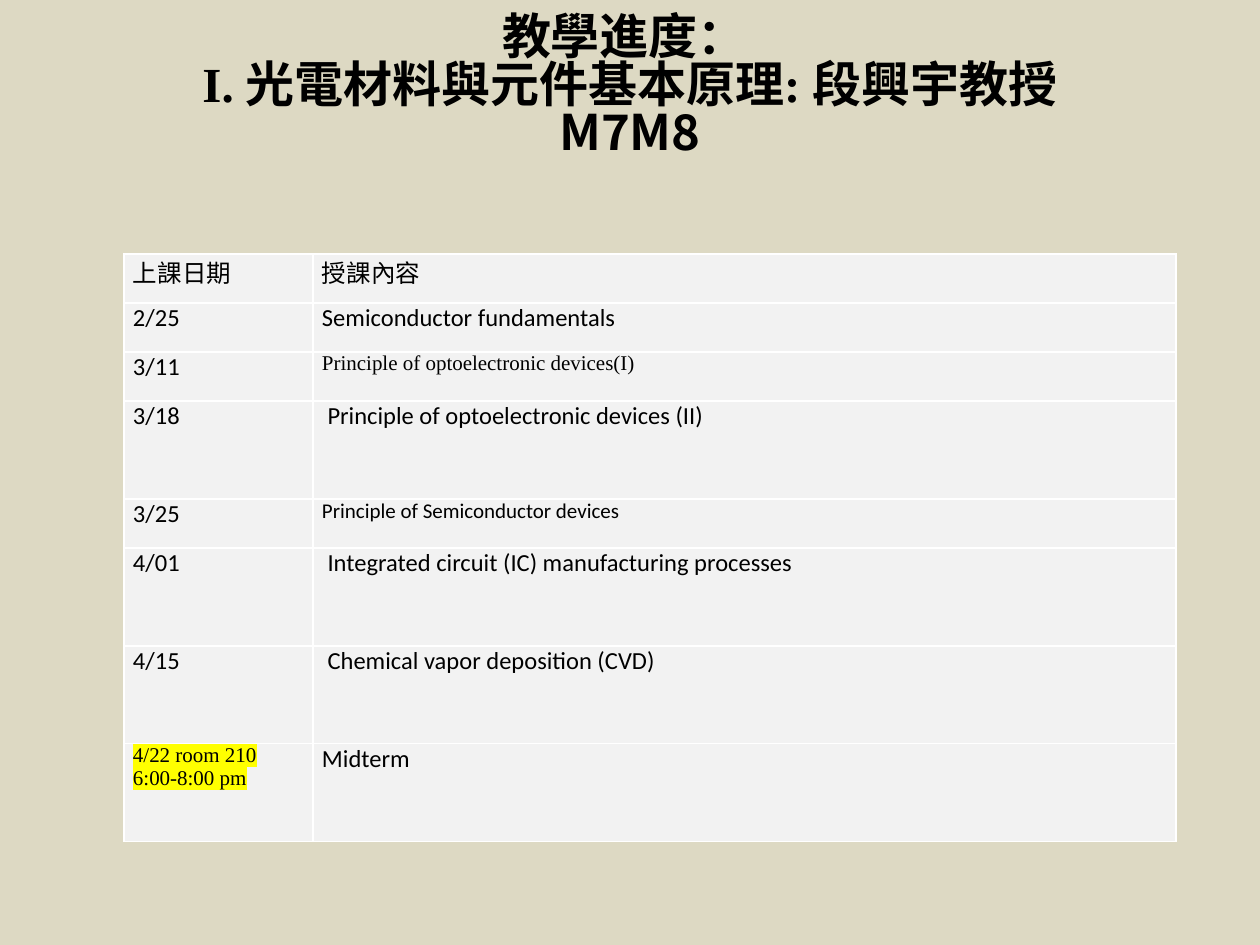
from lxml.etree import SubElement
from pptx import Presentation
from pptx.dml.color import RGBColor
from pptx.enum.text import MSO_ANCHOR as Anchor, PP_ALIGN as Align
from pptx.oxml.ns import qn
from pptx.util import Emu, Pt

PX = 914400 / 126
BEIGE = RGBColor(0xDD, 0xD9, 0xC3)
BLACK = RGBColor(0, 0, 0)
PALE = RGBColor(0xF2, 0xF2, 0xF2)
WHITE = RGBColor(0xFF, 0xFF, 0xFF)
YELLOW = RGBColor(0xFF, 0xFF, 0)
HAN, SERIF, SANS = "Noto Sans CJK SC", "Times New Roman", "Calibri"
BODY = {"size": 14, "name": SANS}
SMALL = {"size": 12, "name": SANS}
SMALL_SERIF = {"size": 12, "name": SERIF}
MARKED = {**SMALL_SERIF, "highlight": YELLOW}

TITLE = [
    [("教學進度： ", HAN)],
    [("I. ", SERIF), ("光電材料與元件基本原理", HAN), (": ", SERIF), ("段興宇教授", HAN)],
    [("M7M8", HAN)],
]
SCHEDULE = [
    (49, ["上課日期"], BODY, "授課內容", BODY),
    (49, ["2/25"], BODY, "Semiconductor fundamentals ", BODY),
    (49, ["3/11"], BODY, "Principle of optoelectronic devices(I)", SMALL_SERIF),
    (98, ["3/18"], BODY, " Principle of optoelectronic devices (II) ", BODY),
    (49, ["3/25"], BODY, "Principle of Semiconductor devices", SMALL),
    (98, ["4/01"], BODY, " Integrated circuit (IC) manufacturing processes", BODY),
    (98, ["4/15"], BODY, " Chemical vapor deposition (CVD)", BODY),
    (98, ["4/22 room 210", "6:00-8:00 pm"], MARKED, "Midterm", BODY),
]


def px(length):
    return Emu(round(length * PX))


def set_all(target, values):
    for name, value in values.items():
        setattr(target, name, value)


class SlideBuilder:
    def __init__(self, slide):
        self.slide = slide
        self.slide.background.fill.solid()
        self.slide.background.fill.fore_color.rgb = BEIGE

    def span(self, para, text, size, name, bold=False, highlight=None):
        span = para.add_run()
        span.text = text
        span.font.color.rgb = BLACK
        properties = span.font._element
        if highlight is not None:
            mark = SubElement(properties, qn("a:highlight"))
            SubElement(mark, qn("a:srgbClr"), val=str(highlight))
        set_all(span.font, {"size": Pt(size), "bold": bold, "name": name})
        SubElement(properties, qn("a:ea"), typeface=HAN)

    def title(self, lines, left, top, width, height):
        box = self.slide.shapes.add_textbox(*map(px, (left, top, width, height)))
        set_all(box.text_frame, {
            "word_wrap": True, "vertical_anchor": Anchor.MIDDLE,
            "margin_top": px(6), "margin_bottom": px(64),
        })
        para = box.text_frame.paragraphs[0]
        set_all(para, {"alignment": Align.CENTER, "line_spacing": 0.82})
        for index, line in enumerate(lines):
            if index:
                para.add_line_break()
            for text, name in line:
                self.span(para, text, 28, name, bold=True)

    def cell(self, cell, lines, style):
        set_all(cell, {
            "margin_left": px(9), "margin_right": px(9),
            "margin_top": 0, "margin_bottom": 0,
        })
        properties = cell._tc.get_or_add_tcPr()
        for side in ("lnL", "lnR", "lnT", "lnB"):
            border = SubElement(properties, qn(f"a:{side}"), w=str(Pt(1)))
            fill = SubElement(border, qn("a:solidFill"))
            SubElement(fill, qn("a:srgbClr"), val=str(WHITE))
        cell.fill.solid()
        cell.fill.fore_color.rgb = PALE
        frame = cell.text_frame
        for index, text in enumerate(lines):
            para = frame.add_paragraph() if index else frame.paragraphs[0]
            para.alignment = Align.JUSTIFY
            self.span(para, text, **style)

    def table(self, rows, left, top, widths):
        height = sum(row[0] for row in rows)
        table = self.slide.shapes.add_table(
            len(rows), len(widths), *map(px, (left, top, sum(widths), height))
        ).table
        set_all(table, {"first_row": False, "horz_banding": False})
        for column, width in zip(table.columns, widths):
            column.width = px(width)
        for index, (height, dates, date_style, topic, topic_style) in enumerate(rows):
            table.rows[index].height = px(height)
            self.cell(table.cell(index, 0), dates, date_style)
            self.cell(table.cell(index, 1), [topic], topic_style)


def main():
    deck = Presentation()
    set_all(deck, {"slide_width": px(1260), "slide_height": px(945)})
    page = SlideBuilder(deck.slides.add_slide(deck.slide_layouts[6]))
    page.title(TITLE, 63, 38, 1134, 158)
    page.table(SCHEDULE, 124, 254, (189, 863))
    deck.save("out.pptx")


if __name__ == "__main__":
    main()
